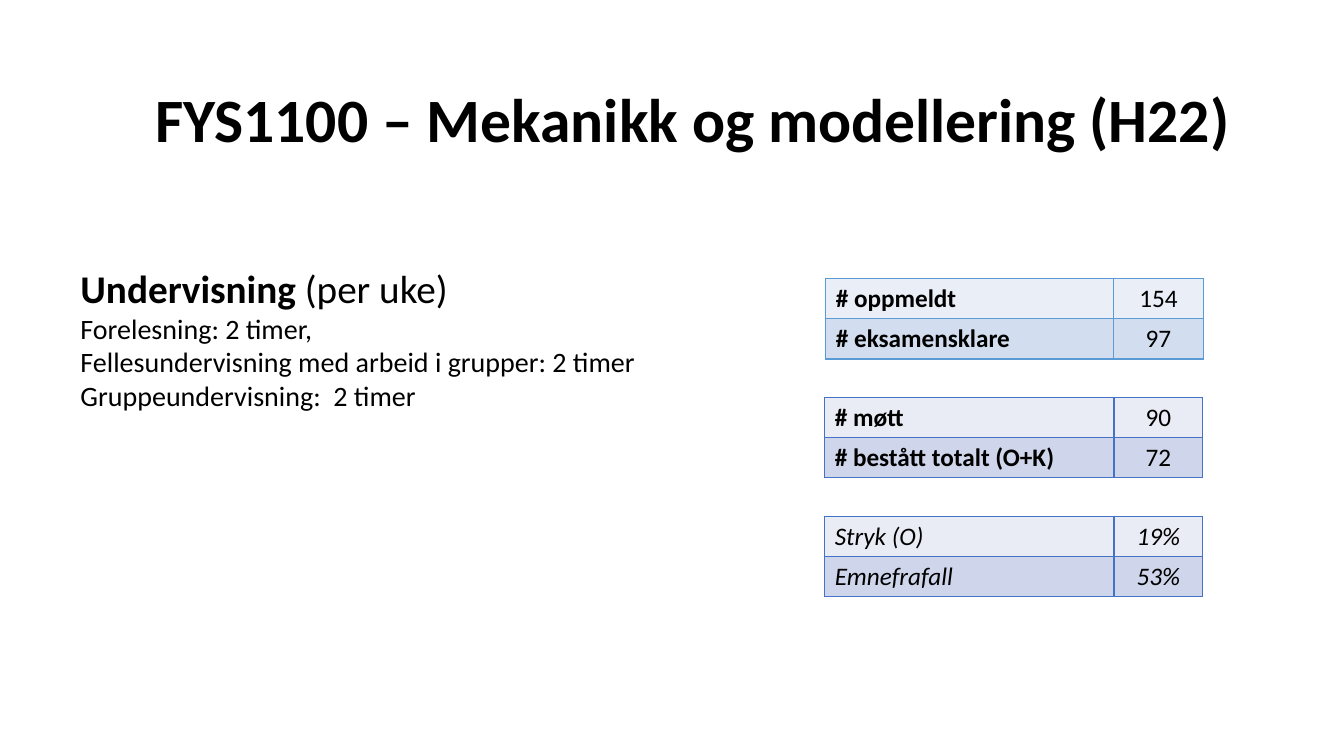
from dataclasses import dataclass

from pptx import Presentation
from pptx.dml.color import RGBColor
from pptx.enum.text import PP_ALIGN
from pptx.oxml import parse_xml
from pptx.oxml.ns import nsdecls
from pptx.util import Emu, Pt

EMU_PER_PX = 9144


@dataclass(frozen=True)
class Theme:
    font: str = "Calibri"
    ink: str = "000000"
    title_size: int = 44
    heading_size: int = 28
    body_size: int = 20
    table_size: int = 18
    border_width: int = 12700
    enrolment: tuple = ("5B9BD5", "EAEFF7", "D2DEEF")
    results: tuple = ("4472C4", "E9EBF5", "CFD5EA")


THEME = Theme()


def px(length):
    return Emu(length * EMU_PER_PX)


def add_run(paragraph, words, size, bold=False, italic=False):
    run = paragraph.add_run()
    run.text = words
    run.font.name = THEME.font
    run.font.size = Pt(size)
    run.font.bold = bold
    run.font.italic = italic
    run.font.color.rgb = RGBColor.from_string(THEME.ink)


def add_text(slide, box, lines, spacing=None):
    frame = slide.shapes.add_textbox(*map(px, box)).text_frame
    frame.word_wrap = True
    for index, line in enumerate(lines):
        paragraph = frame.add_paragraph() if index else frame.paragraphs[0]
        if spacing:
            paragraph.line_spacing = spacing
        for words, size, bold in line:
            add_run(paragraph, words, size, bold)


def outline_cell(cell, color):
    properties = cell._tc.get_or_add_tcPr()
    for position, side in enumerate("LRTB"):
        properties.insert(position, parse_xml(
            f'<a:ln{side} {nsdecls("a")} w="{THEME.border_width}"><a:solidFill>'
            f'<a:srgbClr val="{color}"/></a:solidFill></a:ln{side}>'
        ))


def add_figures(slide, left, top, widths, row_height, colors, rows,
                bold_label=False, italic=False):
    border, *bands = colors
    table = slide.shapes.add_table(
        len(rows), len(widths), px(left), px(top),
        px(sum(widths)), px(row_height * len(rows))
    ).table
    table.first_row = False
    for column, width in zip(table.columns, widths):
        column.width = px(width)
    for row, entries in enumerate(rows):
        for column, words in enumerate(entries):
            cell = table.cell(row, column)
            cell.fill.solid()
            cell.fill.fore_color.rgb = RGBColor.from_string(bands[row % 2])
            outline_cell(cell, border)
            paragraph = cell.text_frame.paragraphs[0]
            paragraph.alignment = PP_ALIGN.CENTER if column else PP_ALIGN.LEFT
            add_run(paragraph, words, THEME.table_size,
                    bold_label and column == 0, italic)


def main():
    deck = Presentation()
    deck.slide_width, deck.slide_height = px(1333), px(750)
    slide = deck.slides.add_slide(deck.slide_layouts[6])

    add_text(slide, (144, 39, 1092, 110), [
        [("FYS1100 – Mekanikk og modellering (H22)", THEME.title_size, True)],
    ], spacing=1.5)

    teaching = [
        "Forelesning: 2 timer,",
        "Fellesundervisning med arbeid i grupper: 2 timer",
        "Gruppeundervisning:  2 timer",
    ]
    add_text(slide, (70, 257, 677, 158), [
        [("Undervisning ", THEME.heading_size, True),
         ("(per uke)", THEME.heading_size, False)],
        *[[(line, THEME.body_size, False)] for line in teaching],
    ])

    first_top, pitch, row_height = 276, 118, 40
    add_figures(slide, 819, first_top, (285, 90), row_height, THEME.enrolment,
                [("# oppmeldt", "154"), ("# eksamensklare", "97")],
                bold_label=True)
    add_figures(slide, 818, first_top + pitch, (287, 88), row_height, THEME.results,
                [("# møtt", "90"), ("# bestått totalt (O+K)", "72")],
                bold_label=True)
    add_figures(slide, 818, first_top + 2 * pitch, (287, 88), row_height, THEME.results,
                [("Stryk (O)", "19%"), ("Emnefrafall", "53%")],
                italic=True)

    deck.save("out.pptx")


if __name__ == "__main__":
    main()
